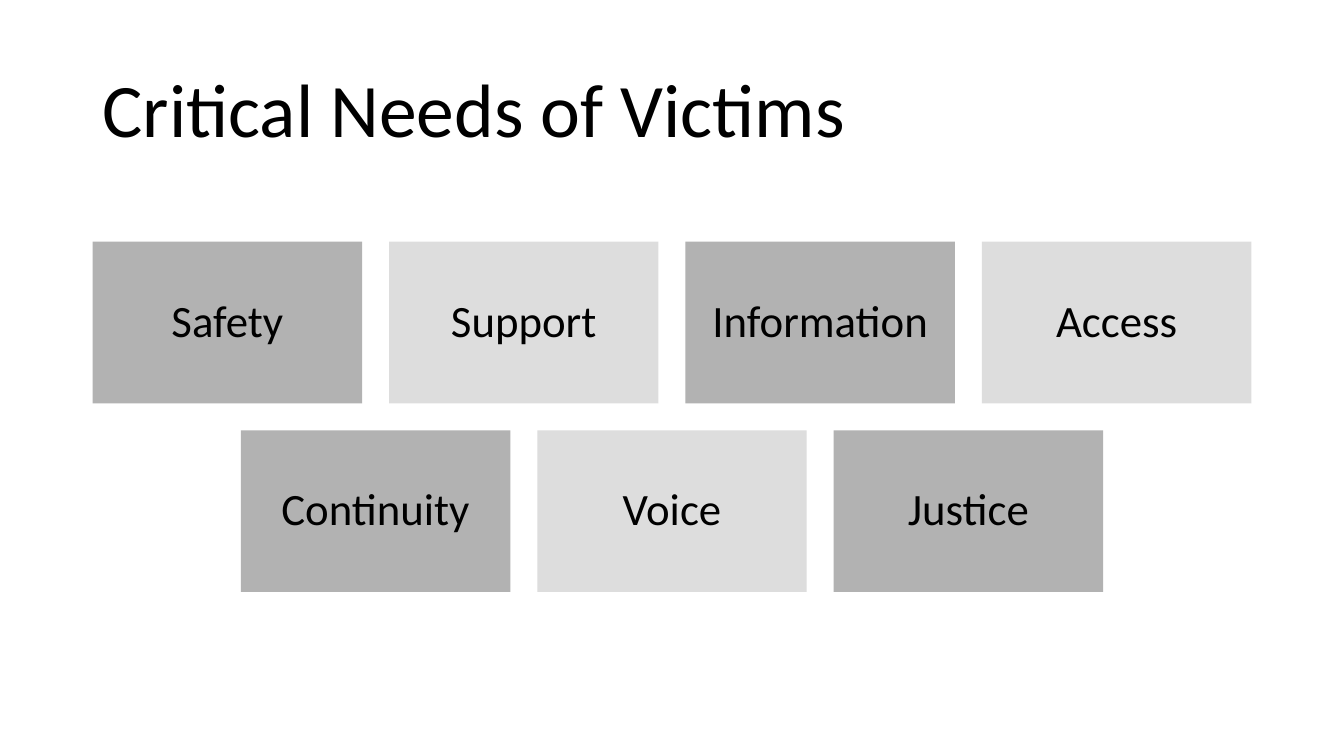
from pptx import Presentation
from pptx.dml.color import RGBColor
from pptx.enum.shapes import MSO_SHAPE
from pptx.enum.text import MSO_ANCHOR, PP_ALIGN
from pptx.util import Pt

RECTANGLE = MSO_SHAPE.RECTANGLE
MIDDLE = MSO_ANCHOR.MIDDLE
LEFT, CENTER = PP_ALIGN.LEFT, PP_ALIGN.CENTER

BLACK = RGBColor(0x00, 0x00, 0x00)
MID_GRAY = RGBColor(0xB2, 0xB2, 0xB2)
LIGHT_GRAY = RGBColor(0xDD, 0xDD, 0xDD)

PAGE_WIDTH, PAGE_HEIGHT = 960, 540
BOX_WIDTH, BOX_HEIGHT = 192.5, 115.5
GAP = 19.25
GRID_TOP = 172.6
INSET = 9.6

NEED_ROWS = [
    ["Safety", "Support", "Information", "Access"],
    ["Continuity", "Voice", "Justice"],
]


def write_line(frame, text, size, alignment):
    frame.word_wrap = True
    frame.vertical_anchor = MIDDLE
    para = frame.paragraphs[0]
    para.alignment = alignment
    para.line_spacing = 0.9
    span = para.add_run()
    span.text = text
    span.font.name = "Calibri"
    span.font.size = Pt(size)
    span.font.color.rgb = BLACK


deck = Presentation()
deck.slide_width, deck.slide_height = Pt(PAGE_WIDTH), Pt(PAGE_HEIGHT)
page = deck.slides.add_slide(deck.slide_layouts.get_by_name("Title Only"))

title = page.shapes.title
title.left, title.top = Pt(66), Pt(28.75)
title.width, title.height = Pt(828), Pt(104.4)
write_line(title.text_frame, "Critical Needs of Victims", 54, LEFT)

for row, needs in enumerate(NEED_ROWS):
    row_width = len(needs) * (BOX_WIDTH + GAP) - GAP
    row_left = (PAGE_WIDTH - row_width) / 2
    top = GRID_TOP + row * (BOX_HEIGHT + GAP)
    for column, need in enumerate(needs):
        left = row_left + column * (BOX_WIDTH + GAP)
        box = page.shapes.add_shape(
            RECTANGLE, Pt(left), Pt(top), Pt(BOX_WIDTH), Pt(BOX_HEIGHT))
        box.shadow.inherit = False
        box.fill.solid()
        box.fill.fore_color.rgb = LIGHT_GRAY if column % 2 else MID_GRAY
        box.line.fill.background()
        frame = box.text_frame
        frame.margin_left = frame.margin_right = Pt(INSET)
        frame.margin_top = frame.margin_bottom = Pt(INSET)
        write_line(frame, need, 32, CENTER)

deck.save("out.pptx")
